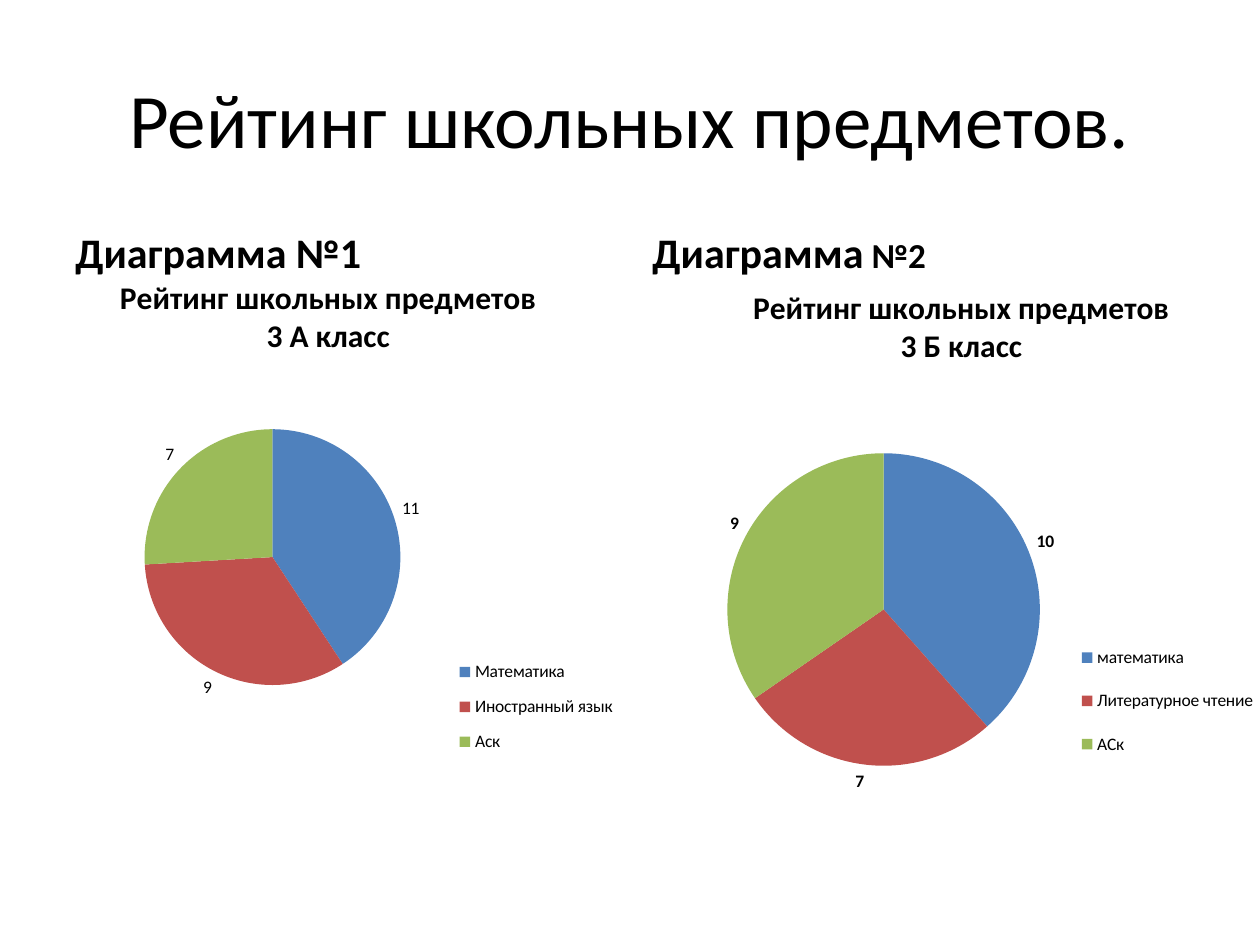
from lxml import etree
from pptx import Presentation
from pptx.chart.data import CategoryChartData as Data
from pptx.dml.color import RGBColor
from pptx.enum.chart import XL_CHART_TYPE as Kind
from pptx.enum.chart import XL_LABEL_POSITION as Spot
from pptx.enum.chart import XL_LEGEND_POSITION as Side
from pptx.enum.text import MSO_ANCHOR as Anchor
from pptx.enum.text import PP_ALIGN as Align
from pptx.oxml.ns import qn
from pptx.util import Inches, Pt

WIDE, HIGH = 10, 7.5
FACE = "Calibri"
INK = "000000"
SLICES = ("4F81BD", "C0504D", "9BBB59")


def tint(code):
    return RGBColor.from_string(code)


def area(x, y, w, h):
    """Turn shares of the slide into lengths."""
    return [Inches(n) for n in (x * WIDE, y * HIGH, w * WIDE, h * HIGH)]


def style(font, size, bold=False):
    font.name = FACE
    font.size = Pt(size)
    font.bold = bold
    font.color.rgb = tint(INK)


def add_text(slide, box, runs, bold=False, align=Align.LEFT, anchor=Anchor.TOP):
    """Add one line of text; runs holds (text, size) pairs."""
    frame = slide.shapes.add_textbox(*area(*box)).text_frame
    frame.word_wrap = True
    frame.vertical_anchor = anchor
    line = frame.paragraphs[0]
    line.alignment = align
    for text, size in runs:
        run = line.add_run()
        run.text = text
        style(run.font, size, bold)


def place(parent, index, box, inner=False):
    """Give a chart part a fixed place, in shares of the chart."""
    for old in parent.findall(qn("c:layout")):
        parent.remove(old)
    layout = etree.Element(qn("c:layout"))
    manual = etree.SubElement(layout, qn("c:manualLayout"))
    rules = [("layoutTarget", "inner")] if inner else []
    rules += [("xMode", "edge"), ("yMode", "edge")]
    rules += zip("xywh", box)
    for tag, val in rules:
        etree.SubElement(manual, qn("c:" + tag)).set("val", str(val))
    parent.insert(index, layout)


def add_pie(slide, box, title, names, vals, plot, key, bold=False, over=False):
    data = Data()
    data.categories = names
    data.add_series("Series 1", vals)
    chart = slide.shapes.add_chart(Kind.PIE, *area(*box), data).chart
    style(chart.font, 10)

    chart.has_title = True
    frame = chart.chart_title.text_frame
    frame.text = title
    for line in frame.paragraphs:
        for run in line.runs:
            style(run.font, 18, True)

    chart.has_legend = True
    legend = chart.legend
    legend.position = Side.RIGHT
    legend.include_in_layout = over
    style(legend.font, 10)
    place(legend._element, 1, key)

    pie = chart.plots[0]
    pie.vary_by_categories = True
    series = pie.series[0]
    for i, code in enumerate(SLICES):
        fill = series.points[i].format.fill
        fill.solid()
        fill.fore_color.rgb = tint(code)
    labels = series.data_labels
    labels.show_value = True
    labels.position = Spot.OUTSIDE_END
    style(labels.font, 10, bold)
    place(pie._element.getparent(), 0, plot, True)


def main():
    deck = Presentation()
    deck.slide_width, deck.slide_height = Inches(WIDE), Inches(HIGH)
    slide = deck.slides.add_slide(deck.slide_layouts[6])

    add_text(slide, (0.05, 0.04, 0.9, 0.17), [("Рейтинг школьных предметов.", 44)],
             align=Align.CENTER, anchor=Anchor.MIDDLE)
    heads = ([("Диаграмма №1", 24)], [("Диаграмма", 24), (" №2", 20)])
    for col, runs in enumerate(heads):
        add_text(slide, (0.05 + col * 0.458, 0.233, 0.442, 0.66), runs, bold=True)

    add_pie(slide, (0.028, 0.27, 0.465, 0.576),
            "Рейтинг школьных предметов\n3 А класс",
            ("Математика", "Иностранный язык", "Аск"), (11, 9, 7),
            plot=(0, 0.32, 0.81, 0.47), key=(0.71, 0.72, 0.29, 0.22), over=True)
    add_pie(slide, (0.526, 0.28, 0.474, 0.624),
            "Рейтинг школьных предметов\n3 Б класс",
            ("математика", "Литературное чтение", "АСк"), (10, 7, 9),
            plot=(0.01, 0.32, 0.72, 0.53), key=(0.69, 0.61, 0.31, 0.26), bold=True)
    deck.save("out.pptx")


if __name__ == "__main__":
    main()
